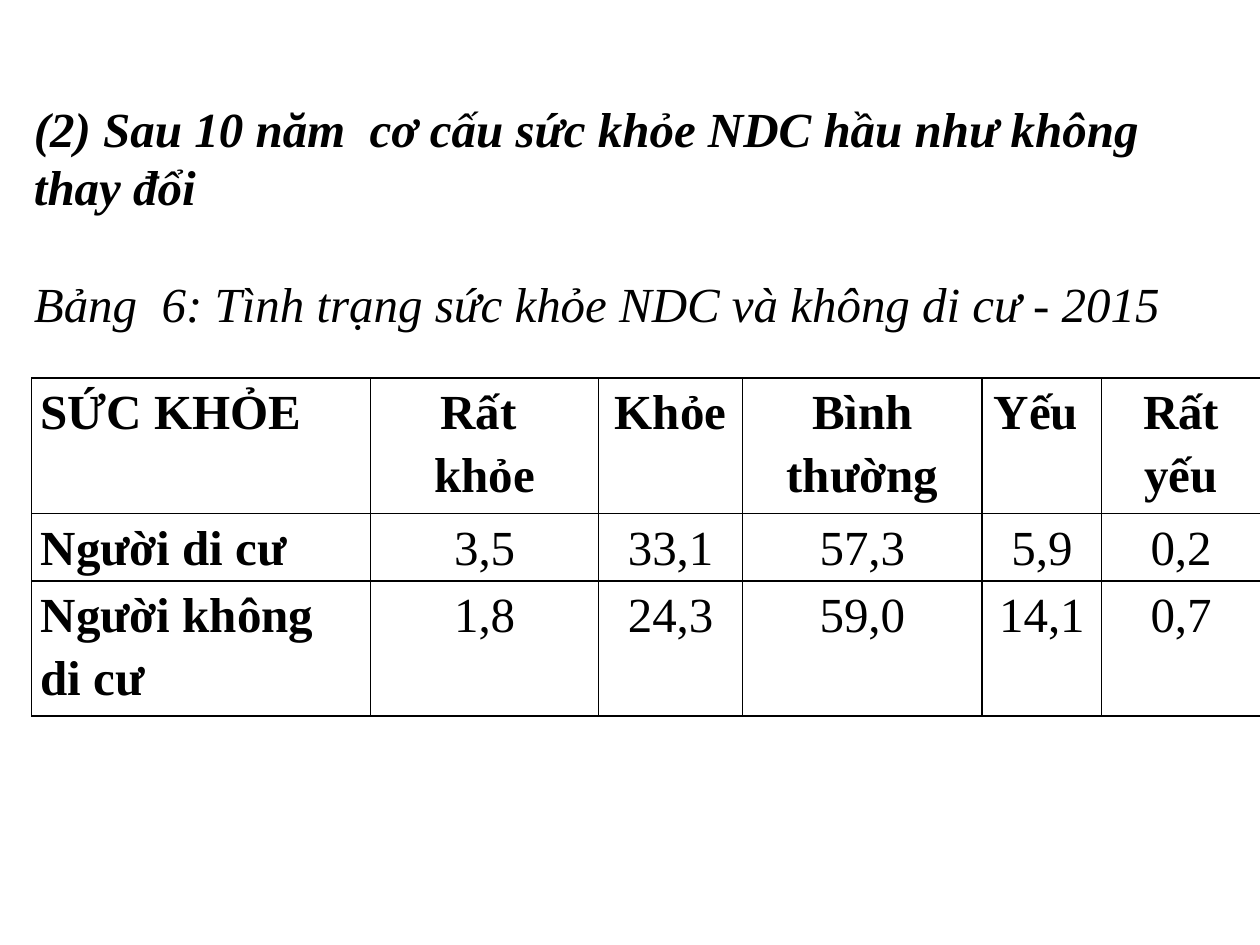
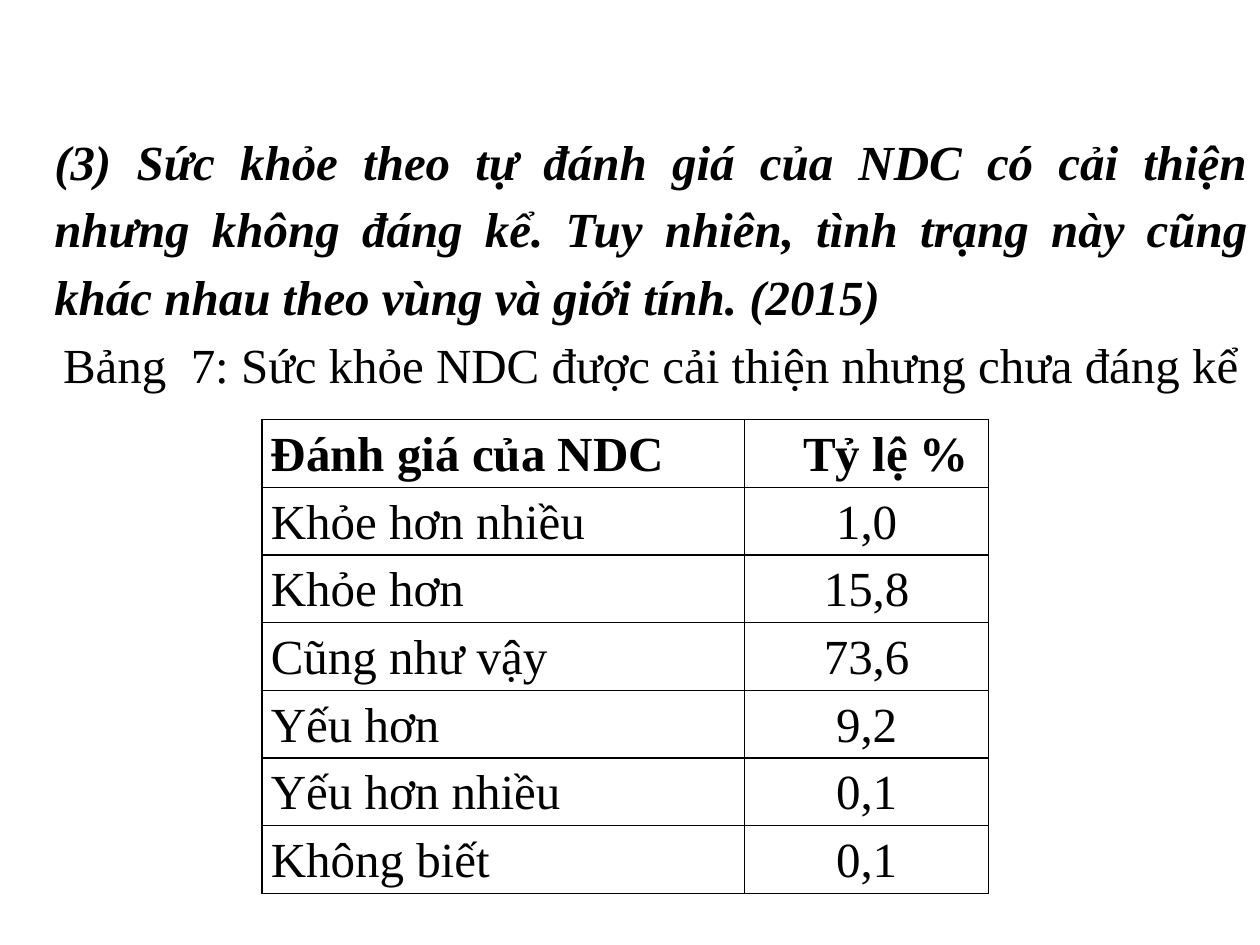
from dataclasses import dataclass

from lxml import etree
from pptx import Presentation
from pptx.dml.color import RGBColor
from pptx.enum import text
from pptx.oxml import ns
from pptx.util import Cm, Pt

# Shared style
FONT, SIZE = "Times New Roman", 28
INK = "000000"
LEFT, CENTER, JUSTIFY = (text.PP_ALIGN.LEFT, text.PP_ALIGN.CENTER,
                         text.PP_ALIGN.JUSTIFY)
ROW_H, LINE = 1.36, 1.15


@dataclass
class Heading:
    """Finding and table caption, in one title placeholder (lengths in cm)."""
    box: tuple[float, float, float, float]
    finding: str
    caption: str
    align: text.PP_ALIGN
    caption_align: text.PP_ALIGN
    caption_italic: bool
    line: float
    caption_gap: float = 0


@dataclass
class Grid:
    """Table of texts; rows_lines is the number of text lines per row."""
    left: float
    top: float
    cols: list[float]
    rows_lines: list[int]
    rows: list[list[str]]
    bold_labels: bool = False
    head_indent: float | None = None


def color(hex_code: str) -> RGBColor:
    return RGBColor.from_string(hex_code)


def write(tf, content: str, *, bold=False, italic=False, align=LEFT,
          line=LINE, before=0, indent=0.0, add=False) -> None:
    """Write one paragraph per line of content."""
    for i, part in enumerate(content.split("\n")):
        p = tf.add_paragraph() if add or i else tf.paragraphs[0]
        p.alignment, p.line_spacing, p.space_before = align, line, Pt(before)
        if indent:
            p._p.get_or_add_pPr().set("marL", str(Cm(indent)))
        r = p.add_run()
        r.text = part
        f = r.font
        f.name, f.size, f.bold, f.italic = FONT, Pt(SIZE), bold, italic
        f.color.rgb = color(INK)


def add_borders(cell, hex_code: str = INK, width: float = 1) -> None:
    tc_pr = cell._tc.get_or_add_tcPr()
    for side in "LRTB":
        ln = etree.SubElement(tc_pr, ns.qn(f"a:ln{side}"), w=str(Pt(width)))
        fill = etree.SubElement(ln, ns.qn("a:solidFill"))
        etree.SubElement(fill, ns.qn("a:srgbClr"), val=hex_code)


def draw_heading(slide, h: Heading) -> None:
    sp = slide.shapes.title
    sp.left, sp.top, sp.width, sp.height = (Cm(v) for v in h.box)
    tf = sp.text_frame
    tf.word_wrap = True
    tf.vertical_anchor = text.MSO_ANCHOR.TOP
    tf.auto_size = text.MSO_AUTO_SIZE.SHAPE_TO_FIT_TEXT
    write(tf, h.finding, bold=True, italic=True, align=h.align, line=h.line)
    write(tf, h.caption, italic=h.caption_italic, align=h.caption_align,
          line=h.line, before=h.caption_gap, add=True)


def draw_grid(slide, g: Grid) -> None:
    heights = [n * ROW_H for n in g.rows_lines]
    frame = slide.shapes.add_table(
        len(g.rows), len(g.cols), Cm(g.left), Cm(g.top),
        Cm(sum(g.cols)), Cm(sum(heights)))
    table = frame.table
    table.first_row = table.horz_banding = False
    for col, width in zip(table.columns, g.cols):
        col.width = Cm(width)
    for row, height in zip(table.rows, heights):
        row.height = Cm(height)
    for i, row in enumerate(g.rows):
        for j, content in enumerate(row):
            cell = table.cell(i, j)
            cell.margin_left = cell.margin_right = Cm(0.18)
            cell.margin_top = cell.margin_bottom = 0
            add_borders(cell)
            cell.fill.background()
            indented = i == 0 and j > 0 and g.head_indent is not None
            write(cell.text_frame, content,
                  bold=i == 0 or (j == 0 and g.bold_labels),
                  align=LEFT if j == 0 or indented else CENTER,
                  indent=g.head_indent if indented else 0)


# Content
SLIDES = [
    (Heading((0.43, 1.85, 24.77, 6.1),
             "(2) Sau 10 năm  cơ cấu sức khỏe NDC hầu như không thay đổi",
             "Bảng  6: Tình trạng sức khỏe NDC và không di cư - 2015",
             LEFT, LEFT, caption_italic=True, line=1, caption_gap=33),
     Grid(0.64, 7.62, [6.83, 4.6, 2.9, 4.83, 2.41, 3.2], [2, 1, 2],
          [["SỨC KHỎE", "Rất \nkhỏe", "Khỏe", "Bình thường", "Yếu ", "Rất yếu"],
           ["Người di cư", "3,5", "33,1", "57,3", "5,9", "0,2"],
           ["Người không di cư", "1,8", "24,3", "59,0", "14,1", "0,7"]],
          bold_labels=True)),
    (Heading((0.84, 2.34, 24.56, 5.77),
             "(3) Sức khỏe theo tự đánh giá của NDC có cải thiện nhưng không "
             "đáng kể. Tuy nhiên, tình trạng này cũng khác nhau theo vùng và "
             "giới tính. (2015)",
             "Bảng  7: Sức khỏe NDC được cải thiện nhưng chưa đáng kể",
             JUSTIFY, CENTER, caption_italic=False, line=LINE),
     Grid(5.28, 8.46, [9.73, 4.92], [1] * 7,
          [["Đánh giá của NDC", "Tỷ lệ %"],
           ["Khỏe hơn nhiều", "1,0"],
           ["Khỏe hơn", "15,8"],
           ["Cũng như vậy", "73,6"],
           ["Yếu hơn", "9,2"],
           ["Yếu hơn nhiều", "0,1"],
           ["Không biết", "0,1"]],
          head_indent=1)),
]


def main() -> None:
    prs = Presentation()
    prs.slide_width, prs.slide_height = Cm(25.4), Cm(19.05)
    title_only = prs.slide_layouts[5]
    for heading, grid in SLIDES:
        slide = prs.slides.add_slide(title_only)
        draw_grid(slide, grid)
        draw_heading(slide, heading)
    prs.save("out.pptx")


if __name__ == "__main__":
    main()
